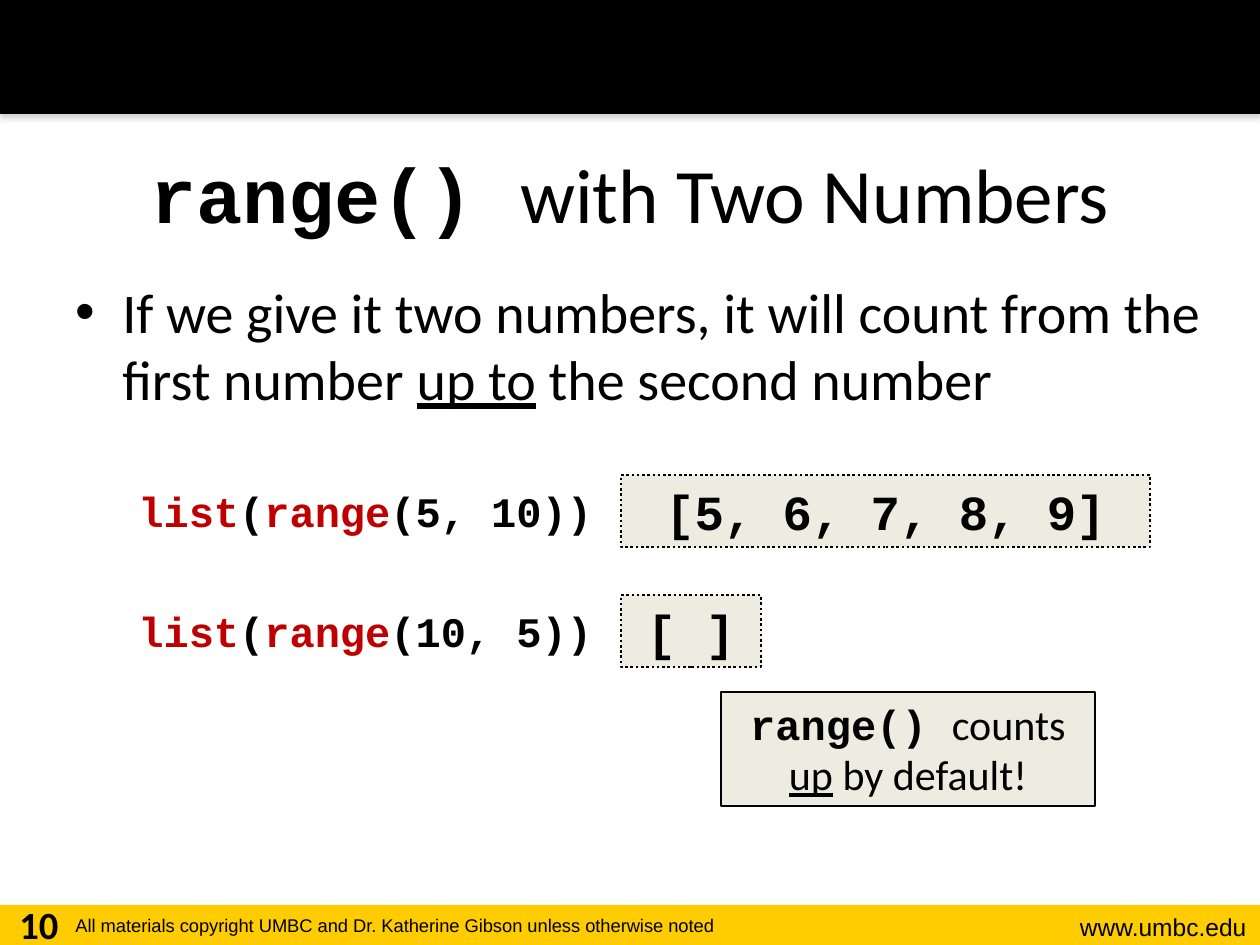
from lxml import etree
from pptx import Presentation
from pptx import util as u
from pptx.dml.color import RGBColor
from pptx.enum import dml, shapes, text
from pptx.oxml.ns import qn

EMU_PER_PX = 914400 / 126
BLACK = RGBColor(0x00, 0x00, 0x00)
GOLD = RGBColor(0xFF, 0xCC, 0x00)
RED = RGBColor(0xC0, 0x00, 0x00)
CREAM = RGBColor(0xEE, 0xEC, 0xE1)
SANS, CODE, FOOTER = "Calibri", "Courier New", "Arial"
LEFT, CENTER, RIGHT = (text.PP_ALIGN.LEFT, text.PP_ALIGN.CENTER,
                       text.PP_ALIGN.RIGHT)


def px(length):
    return u.Emu(round(length * EMU_PER_PX))


class SlideBuilder:
    def __init__(self, width, height):
        self.deck = Presentation()
        self.deck.slide_width, self.deck.slide_height = px(width), px(height)
        self.slide = self.deck.slides.add_slide(self.deck.slide_layouts[5])

    def style(self, font, face=None, size=None, bold=None, color=None,
              underline=None):
        if face:
            font.name = face
        if size:
            font.size = u.Pt(size)
        if bold is not None:
            font.bold = bold
        if color is not None:
            font.color.rgb = color
        if underline:
            font.underline = True

    def fill_paragraph(self, paragraph, runs, align=LEFT, **common):
        """Common style goes on the paragraph, differences on the runs."""
        paragraph.alignment = align
        self.style(paragraph.font, **{"color": BLACK, **common})
        for words, own in runs:
            run = paragraph.add_run()
            run.text = words
            self.style(run.font, **own)

    def title(self, box, runs, **common):
        title = self.slide.shapes.title
        title.left, title.top, title.width, title.height = map(px, box)
        title.text_frame.vertical_anchor = text.MSO_ANCHOR.MIDDLE
        self.fill_paragraph(title.text_frame.paragraphs[0], runs, CENTER,
                            **common)

    def text_box(self, box):
        frame = self.slide.shapes.add_textbox(*map(px, box)).text_frame
        frame.word_wrap = True
        return frame

    def label(self, box, words, align=LEFT, **common):
        frame = self.text_box(box)
        self.fill_paragraph(frame.paragraphs[0], [(words, {})], align,
                            **common)

    def bar(self, box, color):
        bar = self.slide.shapes.add_shape(
            shapes.MSO_SHAPE.RECTANGLE, *map(px, box))
        bar.shadow.inherit = False
        bar.fill.solid()
        bar.fill.fore_color.rgb = color
        bar.line.fill.background()
        return bar

    def drop_shadow(self, shape):
        effects = shape.element.spPr.find(qn("a:effectLst"))
        shadow = etree.SubElement(
            effects, qn("a:outerShdw"), blurRad=str(u.Pt(3.1)),
            dist=str(u.Pt(1.8)), dir="5400000", rotWithShape="0")
        gray = etree.SubElement(shadow, qn("a:srgbClr"), val="808080")
        etree.SubElement(gray, qn("a:alpha"), val="35000")

    def panel(self, box, runs, line_width, dash=None, **common):
        panel = self.bar(box, CREAM)
        panel.line.color.rgb = BLACK
        panel.line.width = u.Pt(line_width)
        if dash:
            panel.line.dash_style = dash
        frame = panel.text_frame
        frame.word_wrap = True
        frame.vertical_anchor = text.MSO_ANCHOR.TOP
        self.fill_paragraph(frame.paragraphs[0], runs, CENTER, **common)

    def indent(self, paragraph, margin, hanging=0, bullet=None):
        props = paragraph._p.get_or_add_pPr()
        props.set("marL", str(px(margin)))
        props.set("indent", str(-px(hanging)))
        if bullet:
            etree.SubElement(props, qn("a:buFont"), typeface="Arial")
            etree.SubElement(props, qn("a:buChar"), char=bullet)


def main():
    page = SlideBuilder(1260, 945)
    mono = {"face": CODE, "bold": True}
    sans = {"face": SANS}
    underlined = {"underline": True}

    # Header and footer bands
    page.bar((0, 905, 1260, 40), GOLD)
    header = page.bar((0, 0, 1260, 114), BLACK)
    page.drop_shadow(header)
    page.label((1008, 906, 251, 43), "www.umbc.edu", RIGHT,
               face=FOOTER, size=14)
    page.label((63, 908, 827, 37),
               "All materials copyright UMBC and Dr. Katherine Gibson "
               "unless otherwise noted", face=FOOTER, size=10.5)
    page.label((0, 895, 78, 50), "10", CENTER, face=SANS, size=22, bold=True)

    # Title
    page.title((63, 114, 1134, 158),
               [("range() ", mono), ("with Two Numbers", sans)], size=44)

    # Explanation and the two calls
    body = page.text_box((63, 271, 1171, 573))
    explanation = body.paragraphs[0]
    page.indent(explanation, 47, 47, "•")
    page.fill_paragraph(explanation, [
        ("If we give it two numbers, it will count from the first number ", {}),
        ("up to", underlined),
        (" the second number", {})], face=SANS, size=32)
    for arguments, gap in (("(5, 10))", 42), ("(10, 5))", 40)):
        call = body.add_paragraph()
        page.indent(call, 63)
        call.space_before = u.Pt(gap)
        page.fill_paragraph(call, [
            ("list", {"color": RED}), ("(", {}),
            ("range", {"color": RED}), (arguments, {})], size=24, **mono)

    # Results of the calls
    results = (("[5, 6, 7, 8, 9]", 529), ("[ ]", 140))
    for row, (result, width) in enumerate(results):
        page.panel((621, 475 + 120 * row, width, 72), [(result, {})], 1.5,
                   dml.MSO_LINE.ROUND_DOT, size=28, **mono)

    # Remark
    page.panel((721, 692, 374, 114), [
        ("range() ", mono), ("counts ", sans),
        ("up", {**sans, **underlined}), (" by default!", sans)], 0.75, size=24)

    page.deck.save("out.pptx")


if __name__ == "__main__":
    main()
